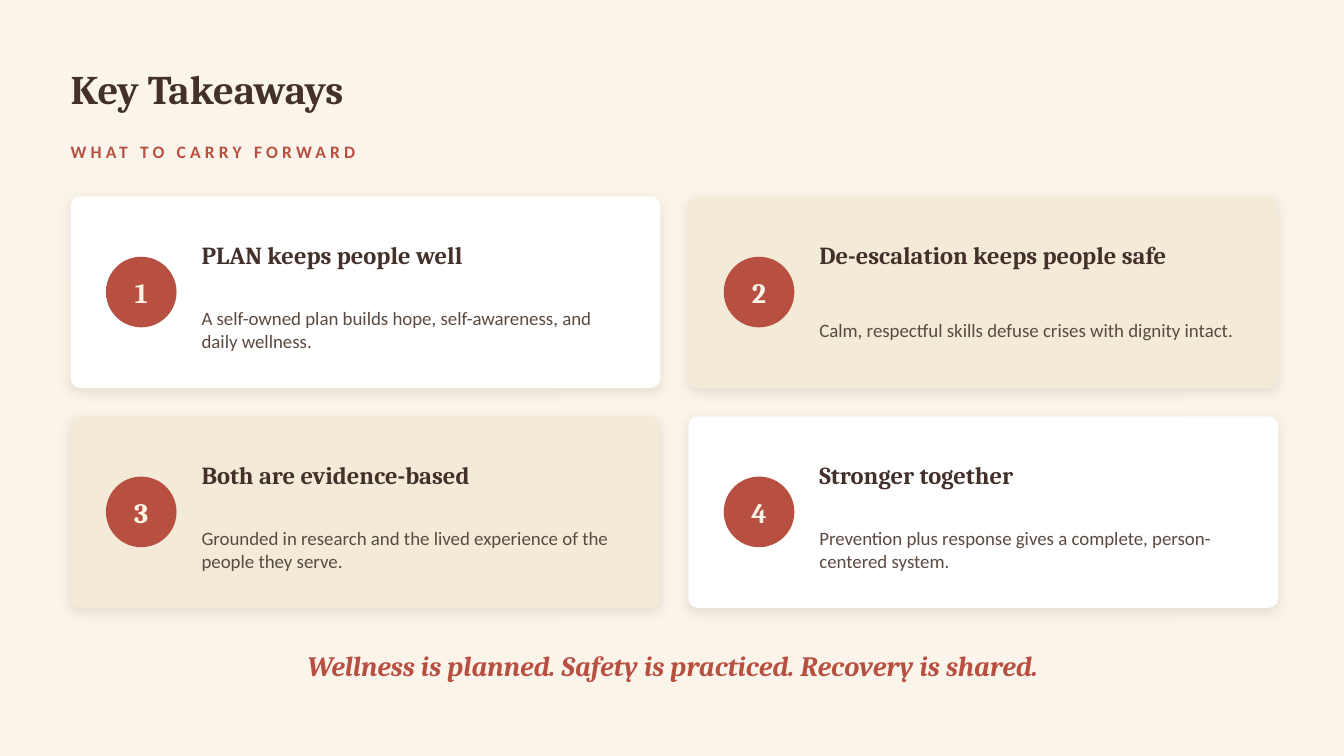
from lxml import etree
from pptx import Presentation
from pptx.dml.color import RGBColor
from pptx.enum.shapes import MSO_SHAPE
from pptx.enum.text import MSO_ANCHOR, PP_ALIGN
from pptx.oxml.ns import qn
from pptx.util import Cm, Pt

ROUNDED, OVAL = MSO_SHAPE.ROUNDED_RECTANGLE, MSO_SHAPE.OVAL
LEFT, CENTER, MIDDLE = PP_ALIGN.LEFT, PP_ALIGN.CENTER, MSO_ANCHOR.MIDDLE

COLORS = {
    "page": "FAF4EA",
    "white": "FFFFFF",
    "sand": "F3EAD8",
    "accent": "B85042",
    "dark": "43302A",
    "body": "5C4A41",
    "number": "FBF3E6",
    "shadow": "9A8873",
}

# Text formats
TITLE = {"name": "Cambria", "size": Pt(29), "bold": True, "color": "dark"}
KICKER = {"name": "Calibri", "size": Pt(12.5), "bold": True, "color": "accent"}
NUMBER = {"name": "Cambria", "size": Pt(20), "bold": True, "color": "number"}
HEADING = {"name": "Cambria", "size": Pt(17.5), "bold": True, "color": "dark"}
BODY = {"name": "Calibri", "size": Pt(13.5), "color": "body"}
CLOSING = {"name": "Cambria", "size": Pt(20), "bold": True, "italic": True,
           "color": "accent"}

# Card grid, in centimetres
MARGIN, GRID_TOP = 1.78, 4.95
CARD_WIDTH, CARD_HEIGHT, GAP = 14.86, 4.83, 0.71

TAKEAWAYS = [
    ("PLAN keeps people well",
     "A self-owned plan builds hope, self-awareness, and daily wellness."),
    ("De-escalation keeps people safe",
     "Calm, respectful skills defuse crises with dignity intact."),
    ("Both are evidence-based",
     "Grounded in research and the lived experience of the people they serve."),
    ("Stronger together",
     "Prevention plus response gives a complete, person-centered system."),
]


def rgb(name):
    return RGBColor.from_string(COLORS[name])


def write(box, text, style, align=LEFT, spacing=None):
    frame = box.text_frame
    frame.word_wrap = True
    frame.vertical_anchor = MIDDLE
    for side in ("left", "top", "right", "bottom"):
        setattr(frame, f"margin_{side}", 0)
    para = frame.paragraphs[0]
    para.alignment = align
    span = para.add_run()
    span.text = text
    for key, value in style.items():
        if key == "color":
            span.font.color.rgb = rgb(value)
        else:
            setattr(span.font, key, value)
    if spacing:
        span._r.get_or_add_rPr().set("spc", str(int(spacing * 100)))


def add_text(page, area, text, style, **options):
    box = page.shapes.add_textbox(*map(Cm, area))
    write(box, text, style, **options)


def add_filled(page, kind, area, fill):
    shape = page.shapes.add_shape(kind, *map(Cm, area))
    shape.shadow.inherit = False
    shape.fill.solid()
    shape.fill.fore_color.rgb = rgb(fill)
    shape.line.fill.background()
    return shape


def add_shadow(shape):
    effects = shape._element.spPr.find(qn("a:effectLst"))
    shadow = etree.SubElement(effects, qn("a:outerShdw"), {
        "blurRad": str(Pt(9)), "dist": str(Pt(3)), "dir": str(90 * 60000),
        "algn": "ctr", "rotWithShape": "0"})
    color = etree.SubElement(shadow, qn("a:srgbClr"), val=COLORS["shadow"])
    etree.SubElement(color, qn("a:alpha"), val="22000")


def add_card(page, index, heading, body):
    row, column = divmod(index, 2)
    left = MARGIN + column * (CARD_WIDTH + GAP)
    top = GRID_TOP + row * (CARD_HEIGHT + GAP)
    fill = "white" if row == column else "sand"

    card = add_filled(page, ROUNDED, (left, top, CARD_WIDTH, CARD_HEIGHT), fill)
    card.adjustments[0] = 0.05
    add_shadow(card)

    badge = add_filled(page, OVAL, (left + 0.89, top + 1.52, 1.78, 1.78), "accent")
    write(badge, str(index + 1), NUMBER, align=CENTER)

    add_text(page, (left + 3.3, top + 0.71, 10.8, 1.52), heading, HEADING)
    add_text(page, (left + 3.3, top + 2.34, 10.8, 2.03), body, BODY)


def main():
    deck = Presentation()
    deck.slide_width, deck.slide_height = Cm(33.87), Cm(19.05)
    page = deck.slides.add_slide(deck.slide_layouts[6])
    page.background.fill.solid()
    page.background.fill.fore_color.rgb = rgb("page")

    # Header
    add_text(page, (MARGIN, 1.14, 30.23, 2.16), "Key Takeaways", TITLE)
    add_text(page, (MARGIN, 3.43, 30.23, 0.76), "WHAT TO CARRY FORWARD", KICKER,
             spacing=3)

    # Takeaway cards
    for index, (heading, body) in enumerate(TAKEAWAYS):
        add_card(page, index, heading, body)

    # Closing line
    add_text(page, (MARGIN, 15.88, 30.35, 1.78),
             "Wellness is planned. Safety is practiced. Recovery is shared.",
             CLOSING, align=CENTER)

    deck.save("out.pptx")


if __name__ == "__main__":
    main()
